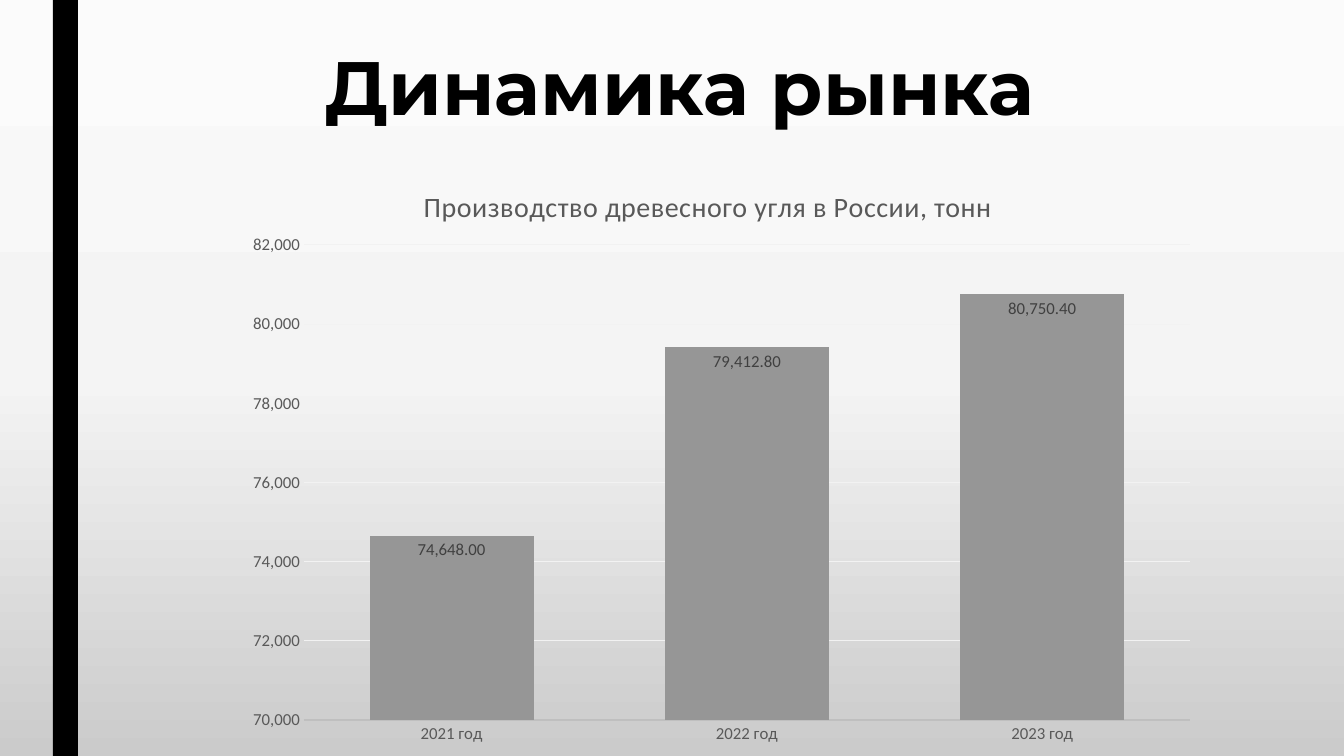
import copy
import dataclasses

import lxml.etree
import pptx
import pptx.chart.data
import pptx.dml.color
import pptx.enum.chart
import pptx.enum.shapes
import pptx.enum.text
import pptx.oxml.ns
import pptx.util

EMU_PER_PX = 9144 * 100 / 100.8
SLIDE_WIDTH, SLIDE_HEIGHT = 1344, 756


@dataclasses.dataclass(frozen=True)
class Theme:
    """Colours, fonts and type sizes of the slide."""
    black: str = "000000"
    bar: str = "969696"
    muted: str = "595959"
    label: str = "404040"
    axis: str = "BFBFBF"
    grid: str = "F2F2F2"
    background: tuple = ((0, "FBFBFB"), (0.5, "F4F4F4"), (1, "CBCBCB"))
    heading_font: str = "Montserrat"
    body_font: str = "Calibri"
    heading_size: int = 54
    chart_title_size: int = 20
    chart_size: int = 12


THEME = Theme()


def px(length):
    """Turn px into EMU."""
    return pptx.util.Emu(round(length * EMU_PER_PX))


def rgb(colour):
    """Turn a hex string into a colour."""
    return pptx.dml.color.RGBColor.from_string(colour)


def style_font(font, name, size, colour, bold=False):
    """Set the face, size, colour and weight of a font."""
    font.name = name
    font.size = pptx.util.Pt(size)
    font.color.rgb = rgb(colour)
    font.bold = bold


def place_chart_part(element, index, **fractions):
    """Give a chart part a manual layout in fractions of the chart."""
    for old_layout in element.findall(pptx.oxml.ns.qn("c:layout")):
        element.remove(old_layout)
    layout = lxml.etree.Element(pptx.oxml.ns.qn("c:layout"))
    manual = lxml.etree.SubElement(layout, pptx.oxml.ns.qn("c:manualLayout"))
    settings = {"xMode": "edge", "yMode": "edge", **fractions}
    if "w" in fractions:
        settings = {"layoutTarget": "inner", **settings}
    for name, value in settings.items():
        lxml.etree.SubElement(manual, pptx.oxml.ns.qn(f"c:{name}")).set("val", str(value))
    element.insert(index, layout)


def paint_background(slide):
    """Fill the slide with a vertical three-stop gradient."""
    fill = slide.background.fill
    fill.gradient()
    fill.gradient_angle = 270
    stop_list = next(slide.element.iter(pptx.oxml.ns.qn("a:gsLst")))
    stop_list.append(copy.deepcopy(stop_list[-1]))
    for stop, (position, colour) in zip(fill.gradient_stops, THEME.background):
        stop.position = position
        stop.color.rgb = rgb(colour)


def add_side_bar(slide, left, top, width, height):
    """Draw the black bar at the left."""
    shape = slide.shapes.add_shape(
        pptx.enum.shapes.MSO_SHAPE.RECTANGLE, px(left), px(top), px(width), px(height))
    shape.shadow.inherit = False
    shape.fill.solid()
    shape.fill.fore_color.rgb = rgb(THEME.black)
    shape.line.fill.background()


def add_heading(slide, text, left, top, width, height):
    """Write the centred slide heading."""
    frame = slide.shapes.add_textbox(px(left), px(top), px(width), px(height)).text_frame
    frame.word_wrap = True
    frame.vertical_anchor = pptx.enum.text.MSO_ANCHOR.TOP
    paragraph = frame.paragraphs[0]
    paragraph.alignment = pptx.enum.text.PP_ALIGN.CENTER
    run = paragraph.add_run()
    run.text = text
    style_font(run.font, THEME.heading_font, THEME.heading_size, THEME.black, True)


def style_axes(chart):
    """Format the category and value axes."""
    for axis in (chart.category_axis, chart.value_axis):
        axis.major_tick_mark = axis.minor_tick_mark = pptx.enum.chart.XL_TICK_MARK.NONE
        style_font(axis.tick_labels.font, THEME.body_font, THEME.chart_size, THEME.muted)
    category_line = chart.category_axis.format.line
    category_line.color.rgb = rgb(THEME.axis)
    category_line.width = pptx.util.Pt(1.25)
    values = chart.value_axis
    values.minimum_scale, values.maximum_scale, values.major_unit = 70000, 82000, 2000
    values.tick_labels.number_format = "#,##0"
    values.tick_labels.number_format_is_linked = False
    values.format.line.fill.background()
    values.has_major_gridlines = True
    values.major_gridlines.format.line.color.rgb = rgb(THEME.grid)
    values.major_gridlines.format.line.width = pptx.util.Pt(0.75)


def style_columns(plot):
    """Format the columns and their value labels."""
    plot.gap_width, plot.overlap = 80, 25
    plot.vary_by_categories = False
    series = plot.series[0]
    series.format.fill.solid()
    series.format.fill.fore_color.rgb = rgb(THEME.bar)
    labels = series.data_labels
    labels.show_value = True
    labels.position = pptx.enum.chart.XL_LABEL_POSITION.INSIDE_END
    labels.number_format = "#,##0.00"
    labels.number_format_is_linked = False
    style_font(labels.font, THEME.body_font, THEME.chart_size, THEME.label)


def add_production_chart(slide, left, top, width, height):
    """Place the column chart of charcoal production."""
    data = pptx.chart.data.CategoryChartData(number_format="#,##0.00")
    data.categories = ["2021 год", "2022 год", "2023 год"]
    data.add_series("Series 1", (74648, 79412.8, 80750.4))
    chart = slide.shapes.add_chart(
        pptx.enum.chart.XL_CHART_TYPE.COLUMN_CLUSTERED,
        px(left), px(top), px(width), px(height), data).chart
    style_font(chart.font, THEME.body_font, THEME.chart_size, THEME.black)
    chart.has_legend = False
    chart.has_title = True
    run = chart.chart_title.text_frame.paragraphs[0].add_run()
    run.text = "Производство древесного угля в России, тонн"
    style_font(run.font, THEME.body_font, THEME.chart_title_size, THEME.muted)
    run.font._element.set("spc", "25")
    style_axes(chart)
    style_columns(chart.plots[0])
    chart_space = chart.element
    place_chart_part(next(chart_space.iter(pptx.oxml.ns.qn("c:title"))), 1, x=0.19, y=0.04)
    place_chart_part(next(chart_space.iter(pptx.oxml.ns.qn("c:plotArea"))), 0,
                     x=71 / width, y=87 / height, w=886 / width, h=475 / height)


def build_market_slide(presentation):
    """Build the market dynamics slide."""
    slide = presentation.slides.add_slide(presentation.slide_layouts[6])
    paint_background(slide)
    add_side_bar(slide, 53, 0, 25, SLIDE_HEIGHT)
    add_heading(slide, "Динамика рынка", 151, 35, 1058, 163)
    add_production_chart(slide, 233, 158, 977, 598)


def main():
    """Create and save the presentation."""
    presentation = pptx.Presentation()
    presentation.slide_width = px(SLIDE_WIDTH)
    presentation.slide_height = px(SLIDE_HEIGHT)
    build_market_slide(presentation)
    presentation.save("out.pptx")


if __name__ == "__main__":
    main()
